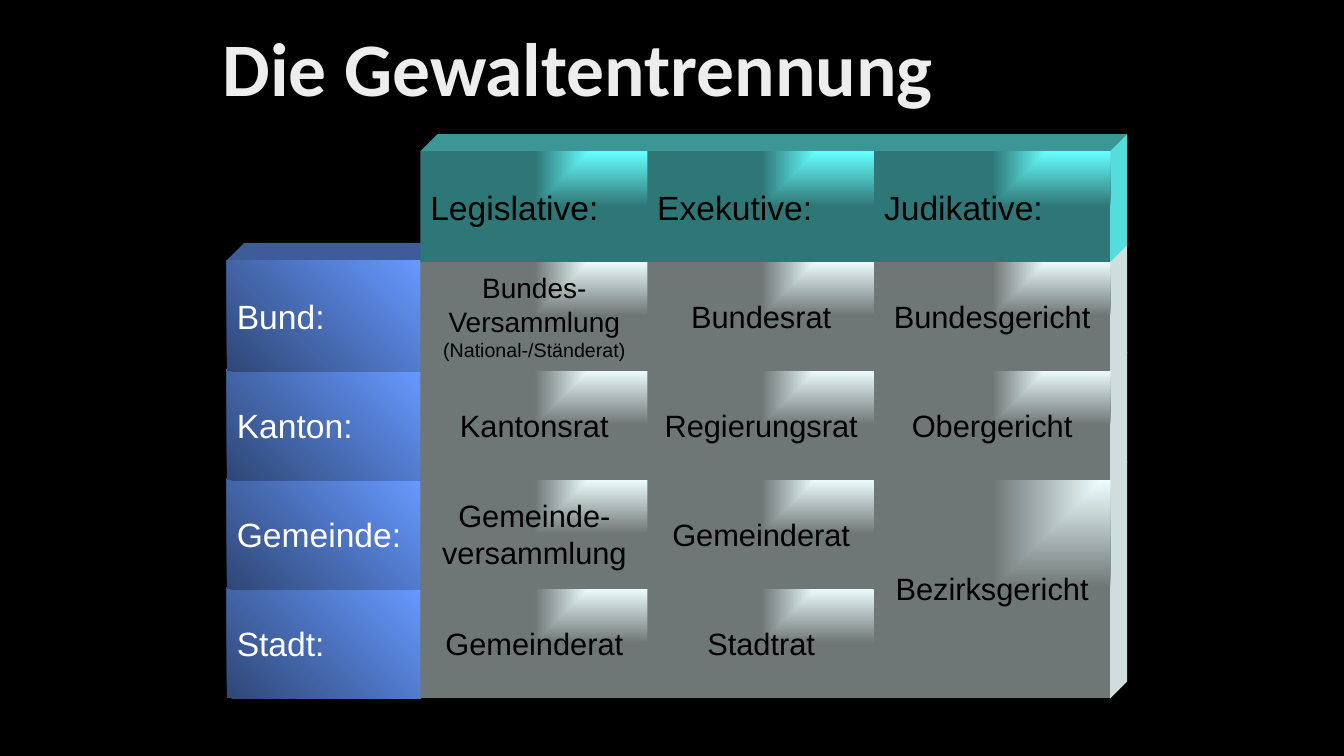
from dataclasses import dataclass

from lxml.etree import SubElement
from pptx import Presentation
from pptx.dml.color import RGBColor
from pptx.enum.shapes import MSO_SHAPE
from pptx.enum.text import MSO_ANCHOR, MSO_AUTO_SIZE, PP_ALIGN
from pptx.oxml import parse_xml
from pptx.oxml.ns import nsdecls, qn
from pptx.util import Inches, Pt


@dataclass(frozen=True)
class Finish:
    """Front gradient, side colours and text format of one kind of block."""
    stops: tuple
    top: str
    side: str
    ink: str
    size: int
    align: PP_ALIGN
    angle: int | None = None


class Theme:
    background = "000000"
    font = "Arial"
    title_font = "Calibri"
    title_size = 54
    title_stops = ((0, "BFBFBF"), (28, "EDEDED"), (100, "FFFFFF"))
    title_angle = 80
    small_size = 20
    note_size = 14
    power = Finish(((0, "66FFFF"), (100, "2F7676")), "3C9696", "55DDDD",
                   "000000", 24, PP_ALIGN.LEFT)
    level = Finish(((0, "2F4776"), (100, "6699FF")), "3D5C99", "5885DD",
                   "FFFFFF", 24, PP_ALIGN.LEFT, 315)
    body = Finish(((0, "EFFFFF"), (100, "6F7676")), "8E9696", "CFDDDD",
                  "000000", 22, PP_ALIGN.CENTER)


COLUMN_LEFTS = (2.25, 4.17, 6.42, 8.67)
COLUMN_WIDTHS = (1.92, 2.26, 2.26, 2.34)
GRID_TOP = 1.5
ROW_STEP = 4.33 / 4
ROW_HEIGHT = 1.1
DEPTH = 0.17

POWERS = ("Legislative:", "Exekutive:", "Judikative:")
LEVELS = ("Bund:", "Kanton:", "Gemeinde:", "Stadt:")
BODIES = (
    ("Bundes-\nVersammlung", "Bundesrat", "Bundesgericht"),
    ("Kantonsrat", "Regierungsrat", "Obergericht"),
    ("Gemeinde-\nversammlung", "Gemeinderat", "Bezirksgericht"),
    ("Gemeinderat", "Stadtrat"),
)
NOTES = {"Bundes-\nVersammlung": "(National-/Ständerat)"}
ROW_SPANS = {"Bezirksgericht": 2}


def set_gradient(fill, properties, stops, angle=None):
    """Linear gradient at an angle, or one spreading from the top right corner."""
    fill.background()
    gradient = parse_xml(f'<a:gradFill {nsdecls("a")} rotWithShape="1"/>')
    stop_list = SubElement(gradient, qn("a:gsLst"))
    for position, color in stops:
        stop = SubElement(stop_list, qn("a:gs"), pos=str(position * 1000))
        SubElement(stop, qn("a:srgbClr"), val=color)
    if angle is None:
        spread = SubElement(gradient, qn("a:path"), path="rect")
        SubElement(spread, qn("a:fillToRect"), l="100000", b="100000")
    else:
        SubElement(gradient, qn("a:lin"), ang=str(angle * 60000), scaled="1")
    properties.replace(properties.find(qn("a:noFill")), gradient)


def add_span(para, text, *, size, color, font=Theme.font):
    span = para.add_run()
    span.text = text
    span.font.size = Pt(size)
    span.font.name = font
    span.font.color.rgb = RGBColor.from_string(color)


def add_face(page, points, color):
    start, *others = [(Inches(x), Inches(y)) for x, y in points]
    builder = page.shapes.build_freeform(*start)
    builder.add_line_segments(others, close=True)
    face = builder.convert_to_shape()
    face.shadow.inherit = False
    face.fill.solid()
    face.fill.fore_color.rgb = RGBColor.from_string(color)
    face.line.fill.background()


def add_block(page, text, row, column, finish, *, top_face=False, note=None):
    left, width = COLUMN_LEFTS[column], COLUMN_WIDTHS[column]
    top = GRID_TOP + row * ROW_STEP
    height = ROW_HEIGHT + (ROW_SPANS.get(text, 1) - 1) * ROW_STEP
    right, bottom = left + width, top + height
    if top_face:
        add_face(page, [(left, top), (left + DEPTH, top - DEPTH),
                        (right + DEPTH, top - DEPTH), (right, top)], finish.top)
    if column == len(COLUMN_LEFTS) - 1:
        add_face(page, [(right, top), (right + DEPTH, top - DEPTH),
                        (right + DEPTH, bottom - DEPTH), (right, bottom)], finish.side)

    box = page.shapes.add_shape(MSO_SHAPE.RECTANGLE, Inches(left), Inches(top),
                                Inches(width), Inches(height))
    box.shadow.inherit = False
    box.line.fill.background()
    set_gradient(box.fill, box._element.spPr, finish.stops, finish.angle)
    frame = box.text_frame
    frame.word_wrap = False
    frame.vertical_anchor = MSO_ANCHOR.MIDDLE
    size = Theme.small_size if note else finish.size
    for index, line in enumerate(text.split("\n")):
        para = frame.add_paragraph() if index else frame.paragraphs[0]
        para.alignment = finish.align
        add_span(para, line, size=size, color=finish.ink)
    if note:
        para.add_line_break()
        add_span(para, note, size=Theme.note_size, color=finish.ink)


def add_title(page, text):
    title = page.shapes.title
    title.left, title.top = Inches(2.11), Inches(0.25)
    title.width, title.height = Inches(8.5), Inches(0.92)
    frame = title.text_frame
    frame.auto_size = MSO_AUTO_SIZE.NONE
    frame.vertical_anchor = MSO_ANCHOR.MIDDLE
    para = frame.paragraphs[0]
    para.alignment = PP_ALIGN.LEFT
    para.line_spacing = 0.9
    span = para.add_run()
    span.text = text
    span.font.size = Pt(Theme.title_size)
    span.font.name = Theme.title_font
    span.font.bold = True
    set_gradient(span.font.fill, span._r.get_or_add_rPr(),
                 Theme.title_stops, Theme.title_angle)


def add_grid(page):
    """Stack the rows from the bottom up, so that upper blocks cover lower ones."""
    for row in range(len(LEVELS), 0, -1):
        add_block(page, LEVELS[row - 1], row, 0, Theme.level, top_face=row == 1)
        for column, text in enumerate(BODIES[row - 1], start=1):
            add_block(page, text, row, column, Theme.body, note=NOTES.get(text))
    for column, text in enumerate(POWERS, start=1):
        add_block(page, text, 0, column, Theme.power, top_face=True)


def main():
    deck = Presentation()
    deck.slide_width, deck.slide_height = Inches(13.33), Inches(7.5)
    page = deck.slides.add_slide(deck.slide_layouts[5])
    page.background.fill.solid()
    page.background.fill.fore_color.rgb = RGBColor.from_string(Theme.background)
    add_title(page, "Die Gewaltentrennung")
    add_grid(page)
    deck.save("out.pptx")


if __name__ == "__main__":
    main()
